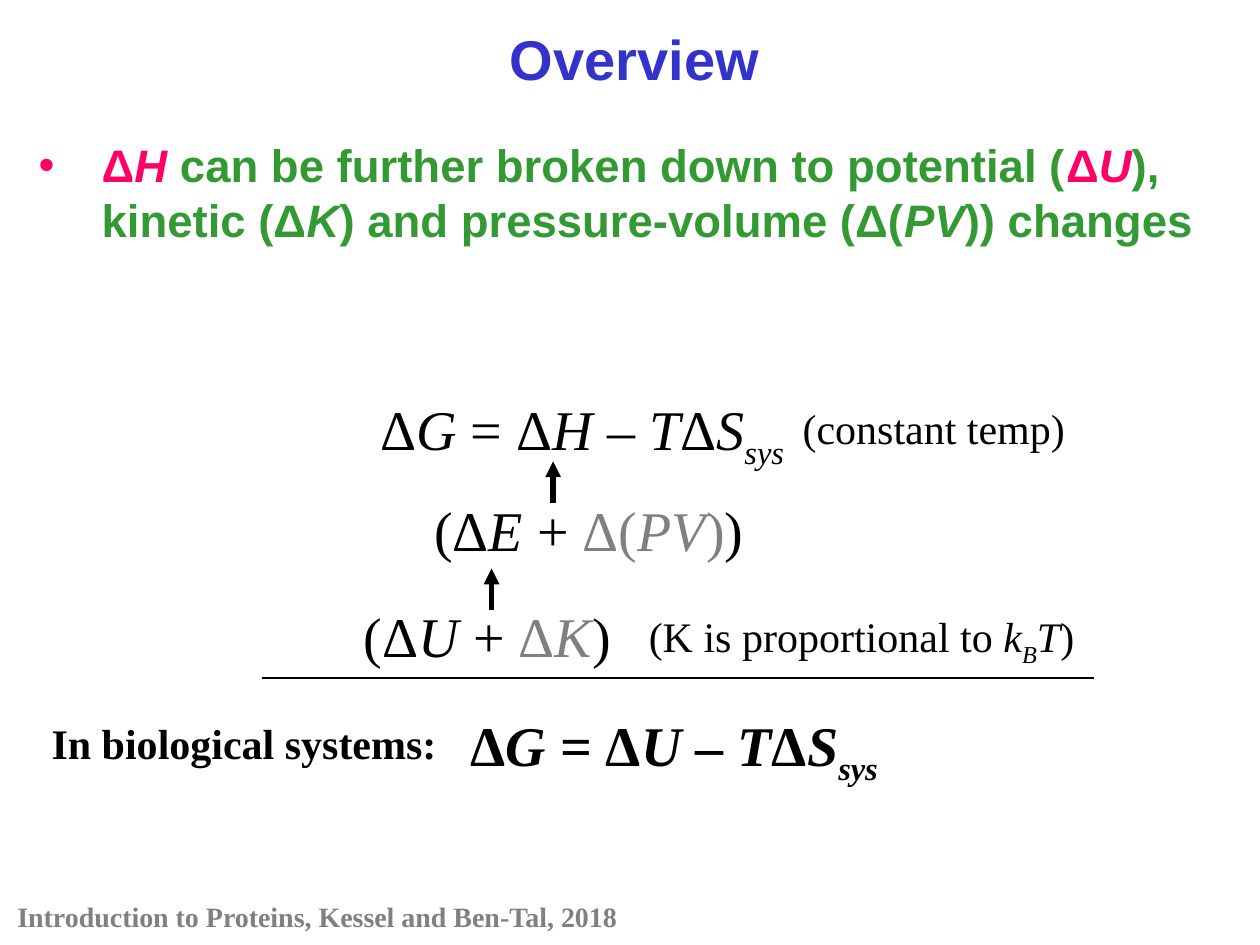
from pptx import Presentation
from pptx.dml.color import RGBColor
from pptx.enum.shapes import MSO_CONNECTOR
from pptx.enum.text import MSO_AUTO_SIZE, PP_ALIGN
from pptx.oxml.ns import qn
from pptx.util import Cm, Pt
from lxml.etree import SubElement

BLACK = RGBColor(0x00, 0x00, 0x00)
GRAY = RGBColor(0x80, 0x80, 0x80)
BLUE = RGBColor(0x33, 0x33, 0xCC)
GREEN = RGBColor(0x33, 0x99, 0x33)
PINK = RGBColor(0xFF, 0x00, 0x66)
SERIF = "Times New Roman"
SANS = "Arial"
ITALIC = "italic"
SUBSCRIPT = "italic subscript"


def add_text(slide, box, runs, size, font=SERIF, color=BLACK, bold=False,
             align=PP_ALIGN.LEFT, wrap=True, spaced=True):
    shape = slide.shapes.add_textbox(*(Cm(length) for length in box))
    frame = shape.text_frame
    frame.word_wrap = wrap
    frame.auto_size = MSO_AUTO_SIZE.SHAPE_TO_FIT_TEXT
    paragraph = frame.paragraphs[0]
    paragraph.alignment = align
    if spaced:
        spacing = SubElement(paragraph._p.get_or_add_pPr(), qn("a:spcBef"))
        SubElement(spacing, qn("a:spcPct")).set("val", "50000")
    for text, style, run_color in runs:
        run = paragraph.add_run()
        run.text = text
        run.font.name = font
        run.font.size = Pt(size)
        run.font.bold = bold
        run.font.italic = ITALIC in style
        run.font.color.rgb = run_color or color
        if style == SUBSCRIPT:
            run.font._element.set("baseline", "-25000")
    return paragraph


def plain(text):
    return [(text, "", None)]


def add_line(slide, start, end, width, arrow=False):
    line = slide.shapes.add_connector(
        MSO_CONNECTOR.STRAIGHT, *(Cm(length) for length in (*start, *end)))
    line.line.color.rgb = BLACK
    line.line.width = Pt(width)
    if arrow:
        SubElement(line.line._get_or_add_ln(), qn("a:tailEnd")).set("type", "triangle")
    SubElement(line._element.spPr, qn("a:effectLst"))


def add_title(slide, box):
    add_text(slide, box, plain("Overview"), 32, SANS, BLUE, True, PP_ALIGN.CENTER)


def add_statement(slide, box):
    runs = [
        ("Δ", "", PINK), ("H ", ITALIC, PINK),
        ("can be further broken down to potential (", "", None),
        ("Δ", "", PINK), ("U", ITALIC, PINK),
        ("), kinetic (Δ", "", None), ("K", ITALIC, None),
        (") and pressure-volume (Δ(", "", None), ("PV", ITALIC, None),
        (")) changes", "", None),
    ]
    paragraph = add_text(slide, box, runs, 26, SANS, GREEN, True)
    properties = paragraph._p.get_or_add_pPr()
    properties.set("marL", str(Cm(1.27)))
    properties.set("indent", str(-Cm(1.27)))
    SubElement(properties, qn("a:buFont")).set("typeface", SANS)
    SubElement(properties, qn("a:buChar")).set("char", "•")


def gibbs_runs(energy):
    return [
        ("Δ", "", None), ("G", ITALIC, None), (" = Δ", "", None),
        (energy, ITALIC, None), (" – ", "", None), ("T", ITALIC, None),
        ("Δ", "", None), ("S", ITALIC, None), ("sys", SUBSCRIPT, None),
    ]


def add_derivation(slide, box):
    left, top, width, height = box
    enthalpy = [
        ("(Δ", "", None), ("E", ITALIC, None), (" + ", "", None),
        ("Δ(", "", GRAY), ("PV", ITALIC, GRAY), (")", "", GRAY), (")", "", None),
    ]
    energy = [
        ("(Δ", "", None), ("U", ITALIC, None), (" + ", "", None),
        ("Δ", "", GRAY), ("K", ITALIC, GRAY), (")", "", None),
    ]
    kinetic_note = [
        ("(K is proportional to ", "", None), ("k", ITALIC, None),
        ("B", SUBSCRIPT, None), ("T", ITALIC, None), (")", "", None),
    ]
    equations = [
        (2.14, 0, 9.12, gibbs_runs("H"), PP_ALIGN.LEFT),
        (2.92, 2.04, 7.34, enthalpy, PP_ALIGN.CENTER),
        (1.55, 4.19, 5.99, energy, PP_ALIGN.CENTER),
    ]
    for x, y, equation_width, runs, align in equations:
        add_text(slide, (left + x, top + y, equation_width, 1.63), runs, 32, align=align)
    notes = [
        (10.65, 0.16, 5.84, plain("(constant temp)")),
        (7.55, 4.37, 9.22, kinetic_note),
    ]
    for x, y, note_width, runs in notes:
        add_text(slide, (left + x, top + y, note_width, 1.27), runs, 24, wrap=False)
    for x, y in [(5.87, 1.48), (4.63, 3.64)]:
        add_line(slide, (left + x, top + y + 0.83), (left + x, top + y), 3, True)
    add_line(slide, (left, top + height), (left + width, top + height), 0.75)


def add_conclusion(slide, box):
    left, top, width, height = box
    add_text(slide, (left, top + 0.13, 8.36, 1.27),
             plain("In biological systems:"), 24, bold=True)
    add_text(slide, (left + 6.63, top, width - 6.63, height), gibbs_runs("U"),
             32, bold=True, align=PP_ALIGN.CENTER)


def add_footer(slide, box):
    add_text(slide, box, plain("Introduction to Proteins, Kessel and Ben-Tal, 2018"),
             16, color=GRAY, bold=True, spaced=False)


def main():
    presentation = Presentation()
    presentation.slide_width = Cm(25.4)
    presentation.slide_height = Cm(19.05)
    slide = presentation.slides.add_slide(presentation.slide_layouts[6])
    add_footer(slide, (0.1, 18.01, 13.51, 0.94))
    add_statement(slide, (0.53, 2.64, 24.87, 2.49))
    add_title(slide, (0.79, 0.36, 24, 1.6))
    add_derivation(slide, (5.28, 7.82, 16.77, 5.85))
    add_conclusion(slide, (0.79, 14.2, 18.97, 1.63))
    presentation.save("out.pptx")


if __name__ == "__main__":
    main()
